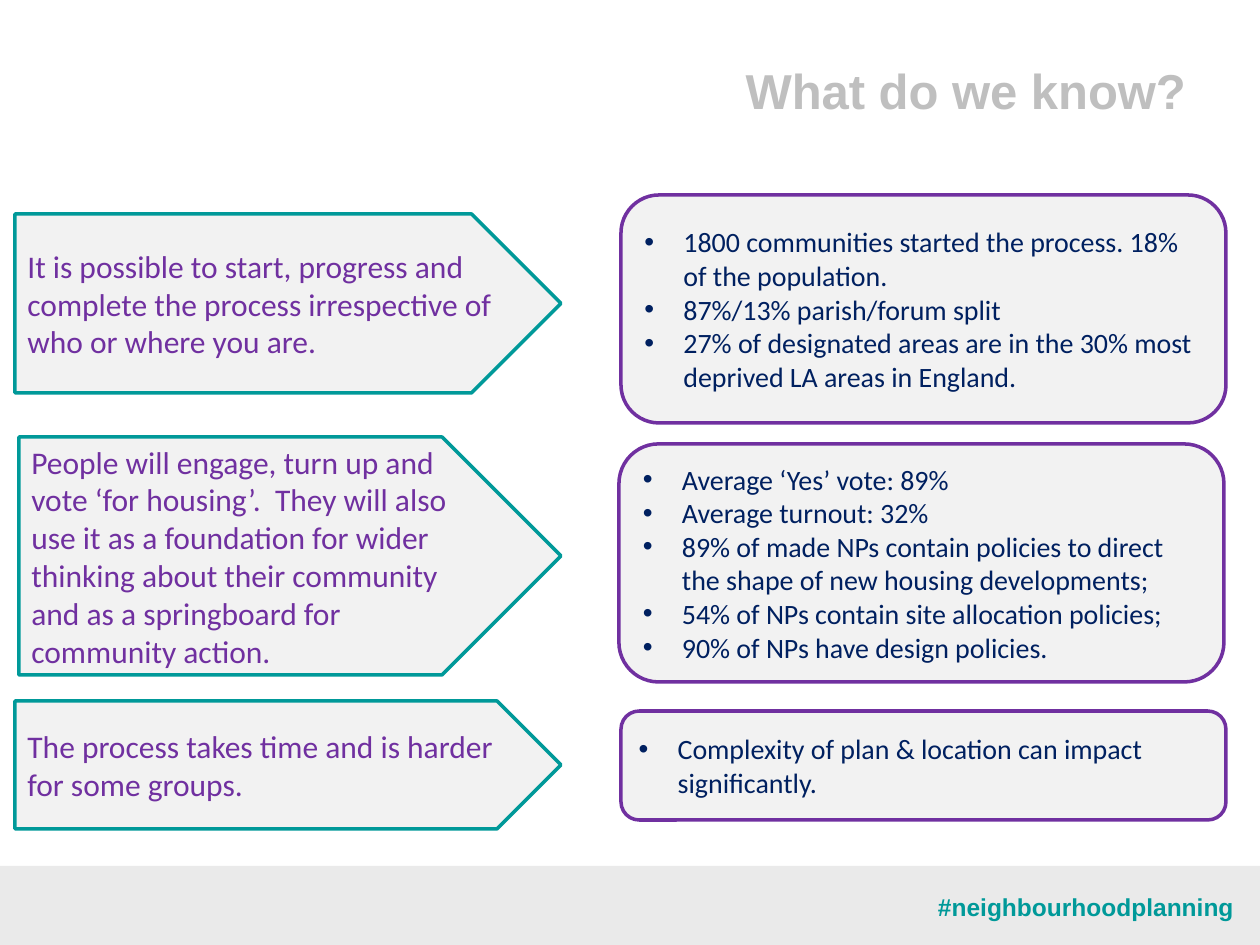
from dataclasses import dataclass
from pptx import Presentation
from pptx.dml.color import RGBColor
from pptx.enum.shapes import MSO_SHAPE
from pptx.enum.text import MSO_ANCHOR, PP_ALIGN
from pptx.oxml.ns import qn
from pptx.util import Pt
from lxml.etree import SubElement


@dataclass(frozen=True)
class Theme:
    teal: str = "009999"
    plum: str = "7030A0"
    navy: str = "002060"
    grey: str = "BFBFBF"
    pale: str = "F2F2F2"
    band: str = "EAEAEA"
    sans: str = "Calibri"
    head: str = "Arial"
    big: int = 28
    claim: int = 18
    fact: int = 16
    tag: int = 14


THEME = Theme()
SCALE = 914400 / 126

CLAIMS = [
    ((15, 214, 546, 179),
     "It is possible to start, progress and complete the process "
     "irrespective of who or where you are."),
    ((19, 437, 542, 238),
     "People will engage, turn up and vote ‘for housing’.  They will also use it "
     "as a foundation for wider thinking about their community and as a "
     "springboard for community action."),
    ((15, 701, 546, 128),
     "The process takes time and is harder for some groups."),
]
FACTS = [
    ((621, 195, 605, 228), [
        "1800 communities started the process. 18% of the population.",
        "87%/13% parish/forum split",
        "27% of designated areas are in the 30% most deprived LA areas in England.",
    ]),
    ((619, 444, 605, 238), [
        "Average ‘Yes’ vote: 89%",
        "Average turnout: 32%",
        "89% of made NPs contain policies to direct the shape of new housing "
        "developments;",
        "54% of NPs contain site allocation policies;",
        "90% of NPs have design policies.",
    ]),
    ((621, 711, 605, 109), [
        "Complexity of plan & location can impact significantly.",
    ]),
]


def px(num):
    return round(num * SCALE)


def ink(code):
    return RGBColor.from_string(code)


def panel(slide, kind, box, fill, line=None):
    shape = slide.shapes.add_shape(kind, *map(px, box))
    shape.shadow.inherit = False
    shape.fill.solid()
    shape.fill.fore_color.rgb = ink(fill)
    if line:
        shape.line.color.rgb = ink(line)
        shape.line.width = Pt(2)
    else:
        shape.line.fill.background()
    return shape


def bullet(para):
    props = para._p.get_or_add_pPr()
    props.set("marL", str(px(39)))
    props.set("indent", str(px(-39)))
    SubElement(props, qn("a:buFont")).set("typeface", THEME.head)
    SubElement(props, qn("a:buChar")).set("char", "•")


def write(shape, lines, face, size, tone, bold=False,
          align=PP_ALIGN.LEFT, dots=False, wrap=True):
    frame = shape.text_frame
    frame.word_wrap = wrap
    frame.vertical_anchor = MSO_ANCHOR.MIDDLE
    for at, line in enumerate(lines):
        para = frame.add_paragraph() if at else frame.paragraphs[0]
        para.alignment = align
        if dots:
            bullet(para)
        run = para.add_run()
        run.text = line
        run.font.name = face
        run.font.size = Pt(size)
        run.font.bold = bold
        run.font.color.rgb = ink(tone)


def title(slide, box, text):
    shape = slide.shapes.title
    shape.left, shape.top, shape.width, shape.height = map(px, box)
    write(shape, [text], THEME.head, THEME.big, THEME.grey, bold=True, wrap=False)


def claim(slide, box, text):
    shape = panel(slide, MSO_SHAPE.PENTAGON, box, THEME.pale, THEME.teal)
    write(shape, [text], THEME.sans, THEME.claim, THEME.plum)


def fact(slide, box, lines):
    shape = panel(slide, MSO_SHAPE.ROUNDED_RECTANGLE, box, THEME.pale, THEME.plum)
    write(shape, lines, THEME.sans, THEME.fact, THEME.navy, dots=True)


def footer(slide, box, text):
    left, top, width, height = box
    panel(slide, MSO_SHAPE.RECTANGLE, box, THEME.band)
    spot = (left + width - 348, top + 19, 348, 43)
    label = slide.shapes.add_textbox(*map(px, spot))
    write(label, [text], THEME.head, THEME.tag, THEME.teal, bold=True,
          align=PP_ALIGN.CENTER)


def main():
    deck = Presentation()
    deck.slide_width, deck.slide_height = px(1260), px(945)
    slide = deck.slides.add_slide(deck.slide_layouts[5])
    for box, lines in FACTS:
        fact(slide, box, lines)
    for box, text in CLAIMS:
        claim(slide, box, text)
    title(slide, (733, 54, 471, 72), "What do we know?")
    footer(slide, (0, 866, 1260, 79), "#neighbourhoodplanning")
    deck.save("out.pptx")


if __name__ == "__main__":
    main()
